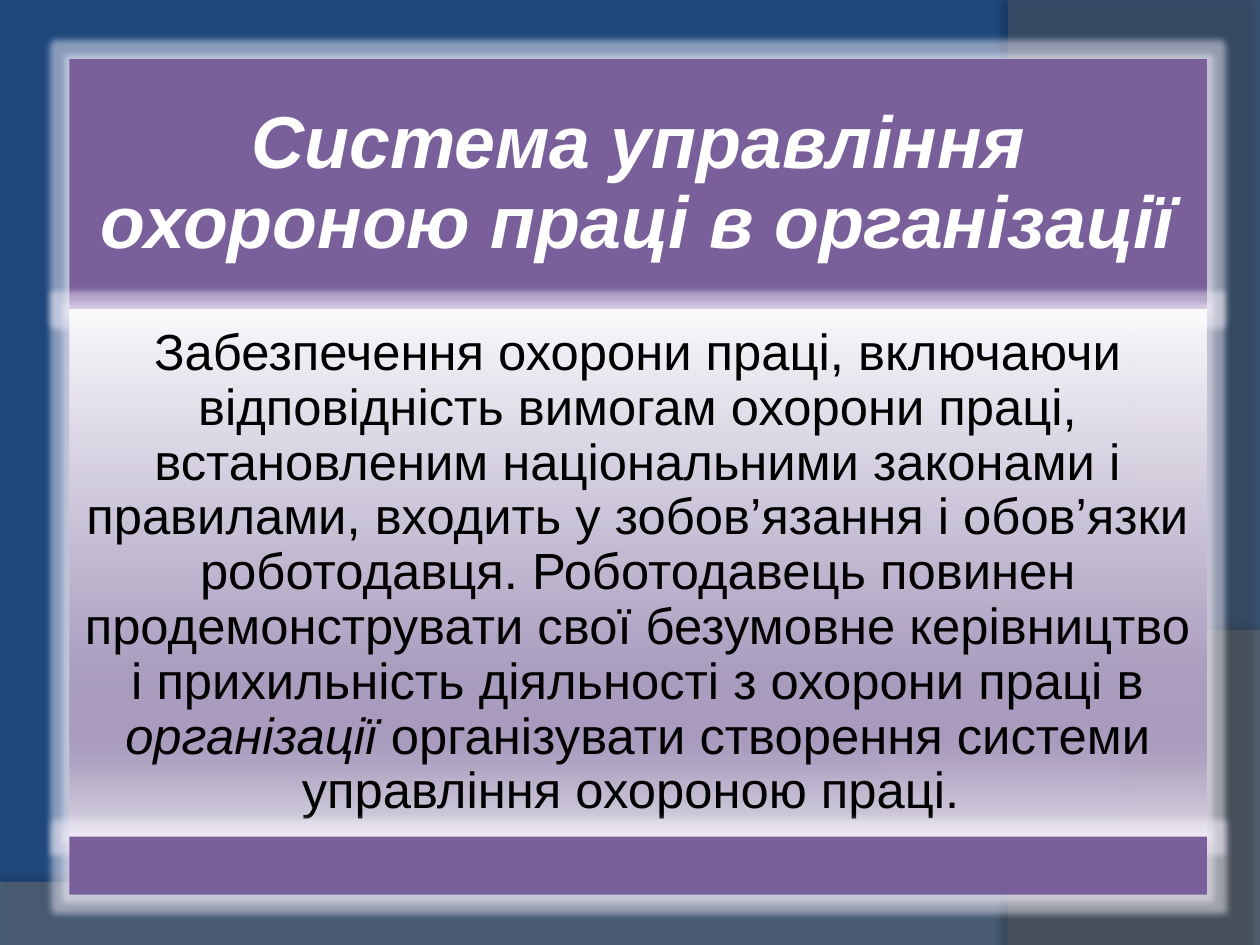
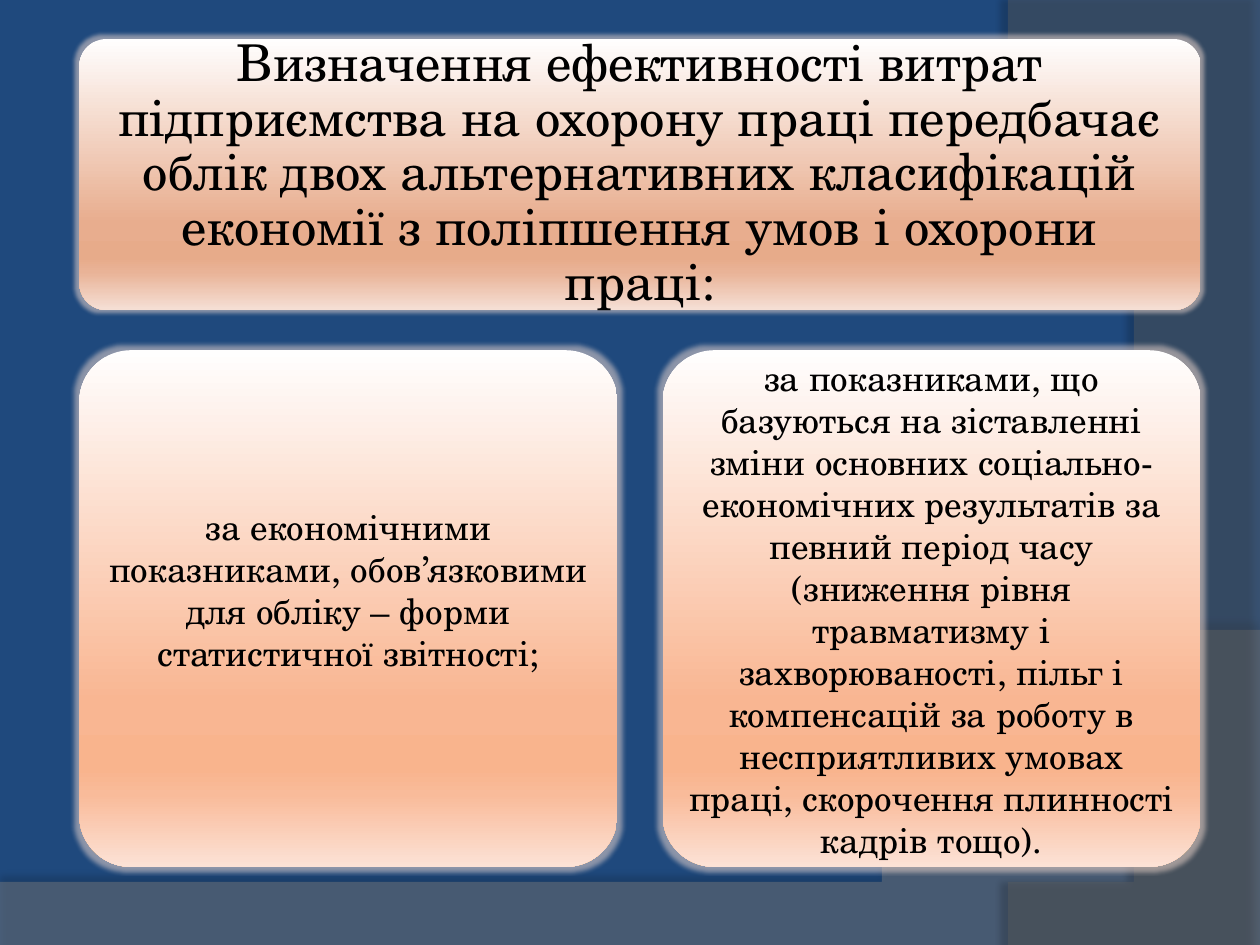
import pptx
import pptx.dml.color
import pptx.enum.shapes
import pptx.enum.text
import pptx.oxml
import pptx.oxml.ns
import pptx.util
from pptx.util import Inches

COLORS = {
    "background": "1F497D", "wave": "7F7F7F", "side": "5E5E5E",
    "shadow": "000000", "purple": "7A609B", "white": "FFFFFF",
    "black": "000000", "lilac_glow": "F4EFFA", "peach_glow": "FCE2D6",
}
# Gradients run from top to bottom through the same stops
STOPS = (0, 68, 81, 86, 100)
GRADIENTS = {
    "lilac": ("FEFEFE", "A99BBD", "A697BB", "AFA3C1", "DDD9E4"),
    "clay": ("FFFEFE", "E8AD8E", "E7AB8A", "E9B397", "F5DFD5"),
    "peach": ("FFFEFE", "F9B692", "F9B48D", "F9BB9A", "FCE2D6"),
}
SANS = "Arial"
SERIF = "TeX Gyre Schola"
RECTANGLE = pptx.enum.shapes.MSO_SHAPE.RECTANGLE
ROUNDED = pptx.enum.shapes.MSO_SHAPE.ROUNDED_RECTANGLE


def rgb(name):
    return pptx.dml.color.RGBColor.from_string(COLORS[name])


def color_xml(value, opacity):
    return f'<a:srgbClr val="{value}"><a:alpha val="{opacity * 1000}"/></a:srgbClr>'


def parse_drawing(tag, attributes, content):
    namespace = pptx.oxml.ns.nsdecls("a")
    return pptx.oxml.parse_xml(
        f"<a:{tag} {namespace} {attributes}>{content}</a:{tag}>")


def add_effect(shape, tag, attributes, color, opacity):
    shape.shadow.inherit = False
    effects = shape._element.spPr.find(pptx.oxml.ns.qn("a:effectLst"))
    effects.append(parse_drawing(tag, attributes, color_xml(COLORS[color], opacity)))


def fill_gradient(shape, name, opacity):
    shape.fill.gradient()
    shape.fill.gradient_angle = 270
    stop_list = next(shape._element.spPr.iter(pptx.oxml.ns.qn("a:gsLst")))
    for stop in list(stop_list):
        stop_list.remove(stop)
    for position, value in zip(STOPS, GRADIENTS[name]):
        stop_list.append(parse_drawing(
            "gs", f'pos="{position * 1000}"', color_xml(value, opacity)))


def curve(start, control_1, control_2, end, steps=40):
    """Points along a cubic curve, without its start."""
    points = []
    for step in range(1, steps + 1):
        t = step / steps
        weights = ((1 - t) ** 3, 3 * t * (1 - t) ** 2, 3 * t ** 2 * (1 - t), t ** 3)
        points.append(tuple(
            sum(weight * value for weight, value in zip(weights, axis))
            for axis in zip(start, control_1, control_2, end)))
    return points


def add_swoosh(slide, points, color, opacity, shadow_opacity, distance, direction):
    builder = slide.shapes.build_freeform(*points[0], scale=Inches(1))
    builder.add_line_segments(points[1:], close=True)
    shape = builder.convert_to_shape()
    shape.fill.solid()
    shape.fill.fore_color.rgb = rgb(color)
    fill_color = next(shape._element.spPr.iter(pptx.oxml.ns.qn("a:srgbClr")))
    fill_color.append(parse_drawing("alpha", f'val="{opacity * 1000}"', ""))
    shape.line.fill.background()
    attributes = (f'blurRad="{pptx.util.Pt(4)}" dist="{pptx.util.Pt(distance)}" '
                  f'dir="{direction * 60000}" rotWithShape="0"')
    add_effect(shape, "outerShdw", attributes, "shadow", shadow_opacity)


def add_base_slide(presentation):
    slide = presentation.slides.add_slide(presentation.slide_layouts[6])
    slide.background.fill.solid()
    slide.background.fill.fore_color.rgb = rgb("background")
    # Wave along the bottom
    wave = [(0, 7.05), (0, 7.5), (10, 7.5), (10, 5.2)]
    wave += curve((10, 5.2), (5.59, 7.29), (3.91, 7.19), (0, 7.05))
    add_swoosh(slide, wave, "wave", 45, 35, 3.5, 270)
    # Curved band on the right
    side = [(10, 0.02), (10, 7.5), (8.21, 7.5)]
    side += curve((8.21, 7.5), (9.35, 6.19), (10.18, 3), (8, 0))
    add_swoosh(slide, side, "side", 40, 45, 4, 180)
    return slide


def add_panel(slide, kind, left, top, width, height, *, color=None,
              gradient=None, opacity=100, glow="peach_glow", glow_size=5):
    shape = slide.shapes.add_shape(
        kind, Inches(left), Inches(top), Inches(width), Inches(height))
    if kind == ROUNDED:
        shape.adjustments[0] = 0.1
    if gradient:
        fill_gradient(shape, gradient, opacity)
    else:
        shape.fill.solid()
        shape.fill.fore_color.rgb = rgb(color)
    shape.line.fill.background()
    add_effect(shape, "glow", f'rad="{pptx.util.Pt(glow_size)}"', glow, 50)
    return shape


def write_text(shape, *parts, size, font, color="black", bold=False,
               italic_parts=(), spacing=0.9, inset=0.12, extra_bottom=0):
    frame = shape.text_frame
    frame.word_wrap = True
    frame.vertical_anchor = pptx.enum.text.MSO_ANCHOR.MIDDLE
    frame.margin_left = frame.margin_right = frame.margin_top = Inches(inset)
    frame.margin_bottom = Inches(inset + extra_bottom)
    paragraph = frame.paragraphs[0]
    paragraph.alignment = pptx.enum.text.PP_ALIGN.CENTER
    paragraph.line_spacing = spacing
    for index, part in enumerate(parts):
        run = paragraph.add_run()
        run.text = part
        run.font.size = pptx.util.Pt(size)
        run.font.name = font
        run.font.bold = bold
        run.font.italic = index in italic_parts
        run.font.color.rgb = rgb(color)


def build_management_slide(presentation):
    slide = add_base_slide(presentation)
    left, width = 0.55, 9.03
    glow = {"glow": "lilac_glow", "glow_size": 7}
    # Heading, body and closing band stacked without gaps
    heading = add_panel(slide, RECTANGLE, left, 0.47, width, 1.99,
                        color="purple", **glow)
    write_text(heading, "Система управління охороною праці в організації",
               size=42, font=SANS, color="white", bold=True,
               italic_parts=(0,), inset=0.17)
    body = add_panel(slide, RECTANGLE, left, 2.46, width, 4.18,
                     gradient="lilac", opacity=90, **glow)
    write_text(
        body,
        "Забезпечення охорони праці, включаючи відповідність вимогам охорони "
        "праці, встановленим національними законами і правилами, входить у "
        "зобов’язання і обов’язки роботодавця. Роботодавець повинен "
        "продемонструвати свої безумовне керівництво і прихильність діяльності "
        "з охорони праці в ",
        "організації ",
        "організувати створення системи управління охороною праці. ",
        size=29, font=SANS, italic_parts=(1,))
    add_panel(slide, RECTANGLE, left, 6.64, width, 0.46, color="purple", **glow)


def build_efficiency_slide(presentation):
    slide = add_base_slide(presentation)
    left, width, gap = 0.63, 8.9, 0.36
    # Heading
    heading = add_panel(slide, ROUNDED, left, 0.31, width, 2.15, gradient="clay")
    write_text(
        heading,
        "Визначення ефективності витрат підприємства на охорону праці "
        "передбачає облік двох альтернативних класифікацій економії з "
        "поліпшення умов і охорони праці:", size=29, font=SERIF)
    # Two classifications side by side, with extra room below each text
    card_width = (width - gap) / 2
    classifications = (
        ("за економічними показниками, обов’язковими для обліку – форми "
         "статистичної звітності;", 0.3),
        ("за показниками, що базуються на зіставленні зміни основних "
         "соціально-економічних результатів за певний період часу (зниження "
         "рівня травматизму і захворюваності, пільг і компенсацій за роботу в "
         "несприятливих умовах праці, скорочення плинності кадрів тощо).", 0),
    )
    for index, (text, extra_bottom) in enumerate(classifications):
        card = add_panel(slide, ROUNDED, left + index * (card_width + gap), 2.78,
                         card_width, 4.1, gradient="peach")
        write_text(card, text, size=20, font=SERIF, spacing=1.0, inset=0.08,
                   extra_bottom=extra_bottom)


def main():
    presentation = pptx.Presentation()
    presentation.slide_width = Inches(10)
    presentation.slide_height = Inches(7.5)
    build_management_slide(presentation)
    build_efficiency_slide(presentation)
    presentation.save("out.pptx")


if __name__ == "__main__":
    main()
